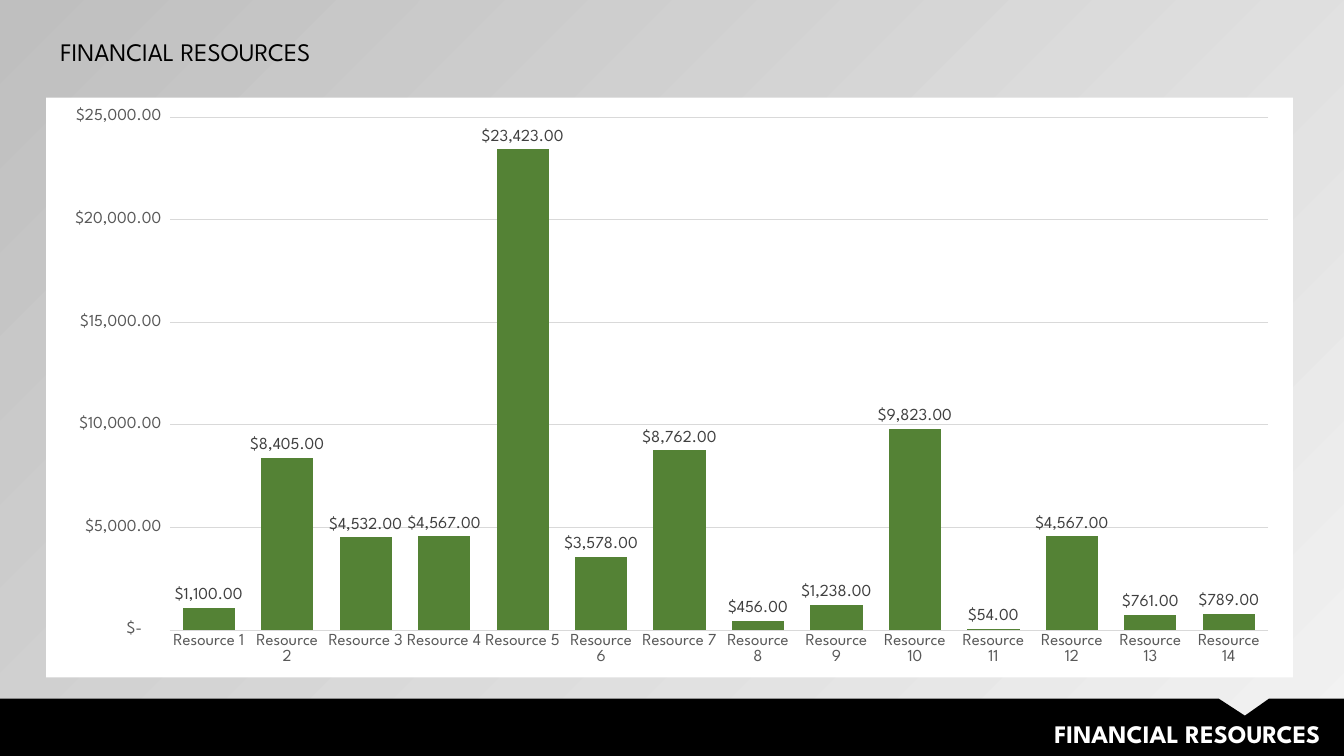
"""Build a financial resources slide with a column chart above a notched footer."""
from dataclasses import dataclass
from typing import Any

from lxml.etree import fromstring
from pptx import Presentation
from pptx.chart.data import CategoryChartData
from pptx.dml.color import RGBColor
from pptx.enum.chart import XL_CHART_TYPE, XL_LABEL_POSITION, XL_TICK_MARK
from pptx.enum.text import MSO_ANCHOR, PP_ALIGN
from pptx.util import Pt


@dataclass(frozen=True)
class Theme:
    """Colours and type sizes of the slide."""
    font: str = "League Spartan"
    black: str = "000000"
    white: str = "FFFFFF"
    column: str = "548235"
    axis_text: str = "595959"
    label_text: str = "404040"
    grid: str = "D9D9D9"
    light: str = "F2F2F2"
    dark: str = "BFBFBF"
    heading_size: float = 18
    label_size: float = 12
    chart_size: float = 10


@dataclass(frozen=True)
class Heading:
    """A line of heading text and its place in points."""
    left: float
    top: float
    width: float
    color: str
    bold: bool
    alignment: PP_ALIGN
    text: str = "FINANCIAL RESOURCES"
    height: float = 28.8


THEME = Theme()
SLIDE_WIDTH, SLIDE_HEIGHT = 960, 540
FOOTER_TOP = 499
FOOTER_OUTLINE = [
    (870.5, FOOTER_TOP), (889.2, 511.2), (906.5, FOOTER_TOP),
    (SLIDE_WIDTH, FOOTER_TOP), (SLIDE_WIDTH, SLIDE_HEIGHT), (0, SLIDE_HEIGHT),
]
HEADINGS = [
    Heading(298, 509.8, 652.3, THEME.white, True, PP_ALIGN.RIGHT),
    Heading(36, 22.3, 319.7, THEME.black, False, PP_ALIGN.LEFT),
]
AMOUNTS = [1100, 8405, 4532, 4567, 23423, 3578, 8762,
           456, 1238, 9823, 54, 4567, 761, 789]
MONEY_FORMAT = r'_("$"* #,##0.00_);_("$"* \(#,##0.00\);_("$"* "-"??_);_(@_)'
CHART_FILL = (
    '<c:spPr xmlns:c="http://schemas.openxmlformats.org/drawingml/2006/chart"'
    ' xmlns:a="http://schemas.openxmlformats.org/drawingml/2006/main">'
    f'<a:solidFill><a:srgbClr val="{THEME.white}"/></a:solidFill>'
    '<a:ln><a:noFill/></a:ln></c:spPr>'
)


def apply(target: Any, values: dict[str, Any]) -> None:
    """Set each named attribute on the target."""
    for name, value in values.items():
        setattr(target, name, value)


def style_font(font: Any, size: float, color: str, bold: bool = False) -> None:
    """Give a font the theme face with a size, colour and weight."""
    apply(font, {"name": THEME.font, "size": Pt(size), "bold": bold})
    font.color.rgb = RGBColor.from_string(color)


def paint(fill: Any, color: str) -> None:
    """Fill with one solid colour."""
    fill.solid()
    fill.fore_color.rgb = RGBColor.from_string(color)


def paint_background(slide: Any) -> None:
    """Shade the slide from light at bottom right to dark at top left."""
    fill = slide.background.fill
    fill.gradient()
    fill.gradient_angle = 135
    for stop, color in zip(fill.gradient_stops, (THEME.light, THEME.dark)):
        stop.color.rgb = RGBColor.from_string(color)


def draw_footer(slide: Any) -> None:
    """Draw the black footer with its notch."""
    builder = slide.shapes.build_freeform(0, Pt(FOOTER_TOP))
    builder.add_line_segments([(Pt(x), Pt(y)) for x, y in FOOTER_OUTLINE], close=True)
    footer = builder.convert_to_shape()
    footer.shadow.inherit = False
    paint(footer.fill, THEME.black)
    footer.line.fill.background()


def draw_heading(slide: Any, heading: Heading) -> None:
    """Draw one heading text box."""
    box = slide.shapes.add_textbox(
        Pt(heading.left), Pt(heading.top), Pt(heading.width), Pt(heading.height))
    apply(box.text_frame, {"word_wrap": True, "vertical_anchor": MSO_ANCHOR.TOP})
    paragraph = box.text_frame.paragraphs[0]
    paragraph.alignment = heading.alignment
    run = paragraph.add_run()
    run.text = heading.text
    style_font(run.font, THEME.heading_size, heading.color, heading.bold)


def style_line(line: Any) -> None:
    """Give a chart line the thin grid style."""
    line.width = Pt(0.75)
    line.color.rgb = RGBColor.from_string(THEME.grid)


def draw_chart(slide: Any) -> None:
    """Draw the column chart of resource amounts."""
    data = CategoryChartData()
    data.categories = [f"Resource {number}" for number in range(1, len(AMOUNTS) + 1)]
    data.add_series("Series 1", AMOUNTS)
    chart = slide.shapes.add_chart(
        XL_CHART_TYPE.COLUMN_CLUSTERED, Pt(33), Pt(69.8), Pt(890.6), Pt(414), data).chart
    apply(chart, {"has_legend": False, "has_title": False})
    style_font(chart.font, THEME.chart_size, THEME.black)
    chart.element.chart.addnext(fromstring(CHART_FILL))

    for axis in (chart.category_axis, chart.value_axis):
        apply(axis, {"major_tick_mark": XL_TICK_MARK.NONE,
                     "minor_tick_mark": XL_TICK_MARK.NONE})
        style_font(axis.tick_labels.font, THEME.label_size, THEME.axis_text)
    style_line(chart.category_axis.format.line)
    value_axis = chart.value_axis
    apply(value_axis, {"minimum_scale": 0, "maximum_scale": 25000,
                       "major_unit": 5000, "has_major_gridlines": True})
    value_axis.format.line.fill.background()
    style_line(value_axis.major_gridlines.format.line)

    plot = chart.plots[0]
    apply(plot, {"gap_width": 50, "vary_by_categories": False})
    paint(plot.series[0].format.fill, THEME.column)
    labels = plot.series[0].data_labels
    apply(labels, {"show_value": True, "position": XL_LABEL_POSITION.OUTSIDE_END})
    style_font(labels.font, THEME.label_size, THEME.label_text)
    for numbers in (value_axis.tick_labels, labels):
        apply(numbers, {"number_format": MONEY_FORMAT, "number_format_is_linked": False})


def main() -> None:
    """Build and save the presentation."""
    presentation = Presentation()
    apply(presentation, {"slide_width": Pt(SLIDE_WIDTH), "slide_height": Pt(SLIDE_HEIGHT)})
    slide = presentation.slides.add_slide(presentation.slide_layouts[6])
    paint_background(slide)
    draw_footer(slide)
    draw_chart(slide)
    for heading in HEADINGS:
        draw_heading(slide, heading)
    presentation.save("out.pptx")


if __name__ == "__main__":
    main()
